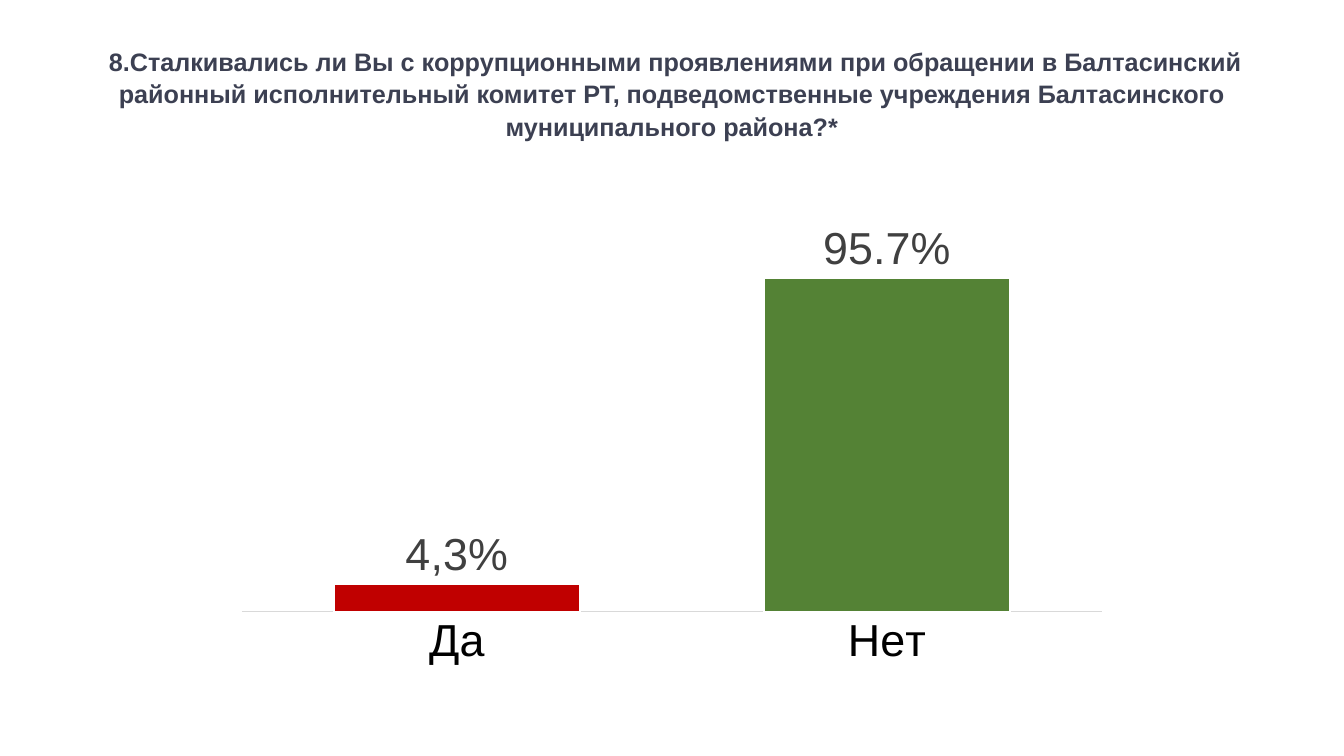
from pptx import Presentation
from pptx.chart.data import CategoryChartData
from pptx.dml.color import RGBColor
from pptx.enum import chart as ch, text
from pptx.util import Pt

TITLE = RGBColor(0x3C, 0x40, 0x52)
RED = RGBColor(0xC0, 0x00, 0x00)
GREEN = RGBColor(0x54, 0x82, 0x35)
BLACK = RGBColor(0x00, 0x00, 0x00)
GREY = RGBColor(0x40, 0x40, 0x40)
AXIS = RGBColor(0xD9, 0xD9, 0xD9)
WHITE = RGBColor(0xFF, 0xFF, 0xFF)


def style(font, size, color, bold=False):
    values = {"name": "Arial", "size": Pt(size), "bold": bold}
    for attribute, value in values.items():
        setattr(font, attribute, value)
    font.color.rgb = color


prs = Presentation()
prs.slide_width, prs.slide_height = Pt(960), Pt(540)
slide = prs.slides.add_slide(prs.slide_layouts[6])

# Question
question = slide.shapes.add_textbox(Pt(36.7), Pt(28.1), Pt(886.3), Pt(77)).text_frame
question.word_wrap = True
question.auto_size = text.MSO_AUTO_SIZE.SHAPE_TO_FIT_TEXT
paragraph = question.paragraphs[0]
paragraph.alignment = text.PP_ALIGN.CENTER
paragraph.line_spacing = 1.07
wording = (
    "8.Сталкивались ли Вы с коррупционными проявлениями при обращении в "
    "Балтасинский районный исполнительный комитет РТ, подведомственные "
    "учреждения Балтасинского муниципального района?*"
)
for part, bold in ((" ", False), (wording, True)):
    run = paragraph.add_run()
    run.text = part
    style(run.font, 18, TITLE, bold)

# Answers
answers = CategoryChartData(number_format="0.0%")
answers.categories = ["Да", "Нет"]
answers.add_series("Series 1", (0.08, 0.957))
chart = slide.shapes.add_chart(
    ch.XL_CHART_TYPE.COLUMN_CLUSTERED, Pt(160), Pt(131), Pt(640), Pt(352), answers
).chart
chart.has_legend = False
chart.has_title = False
style(chart.font, 32, BLACK)

answer_axis = chart.category_axis
answer_axis.major_tick_mark = ch.XL_TICK_MARK.NONE
answer_axis.format.line.color.rgb = AXIS
answer_axis.format.line.width = Pt(0.75)
style(answer_axis.tick_labels.font, 32, BLACK)

share_axis = chart.value_axis
share_axis.visible = False
share_axis.has_major_gridlines = False
share_axis.minimum_scale, share_axis.maximum_scale = 0, 1.2
share_axis.tick_labels.number_format = "0.0%"
share_axis.tick_labels.number_format_is_linked = False

plot = chart.plots[0]
plot.gap_width = 75
plot.vary_by_categories = False
shares = plot.series[0]
shares.format.fill.solid()
shares.format.fill.fore_color.rgb = RED
for index, color in enumerate((RED, GREEN)):
    column = shares.points[index].format
    column.fill.solid()
    column.fill.fore_color.rgb = color
    column.line.color.rgb = WHITE
    column.line.width = Pt(1.5)

labels = shares.data_labels
labels.show_value = True
labels.number_format = "0.0%"
labels.number_format_is_linked = False
labels.position = ch.XL_LABEL_POSITION.OUTSIDE_END
style(labels.font, 32, GREY)

yes_label = shares.points[0].data_label
yes_label.position = ch.XL_LABEL_POSITION.OUTSIDE_END
yes_run = yes_label.text_frame.paragraphs[0].add_run()
yes_run.text = "4,3%"
style(yes_run.font, 32, GREY)

prs.save("out.pptx")
